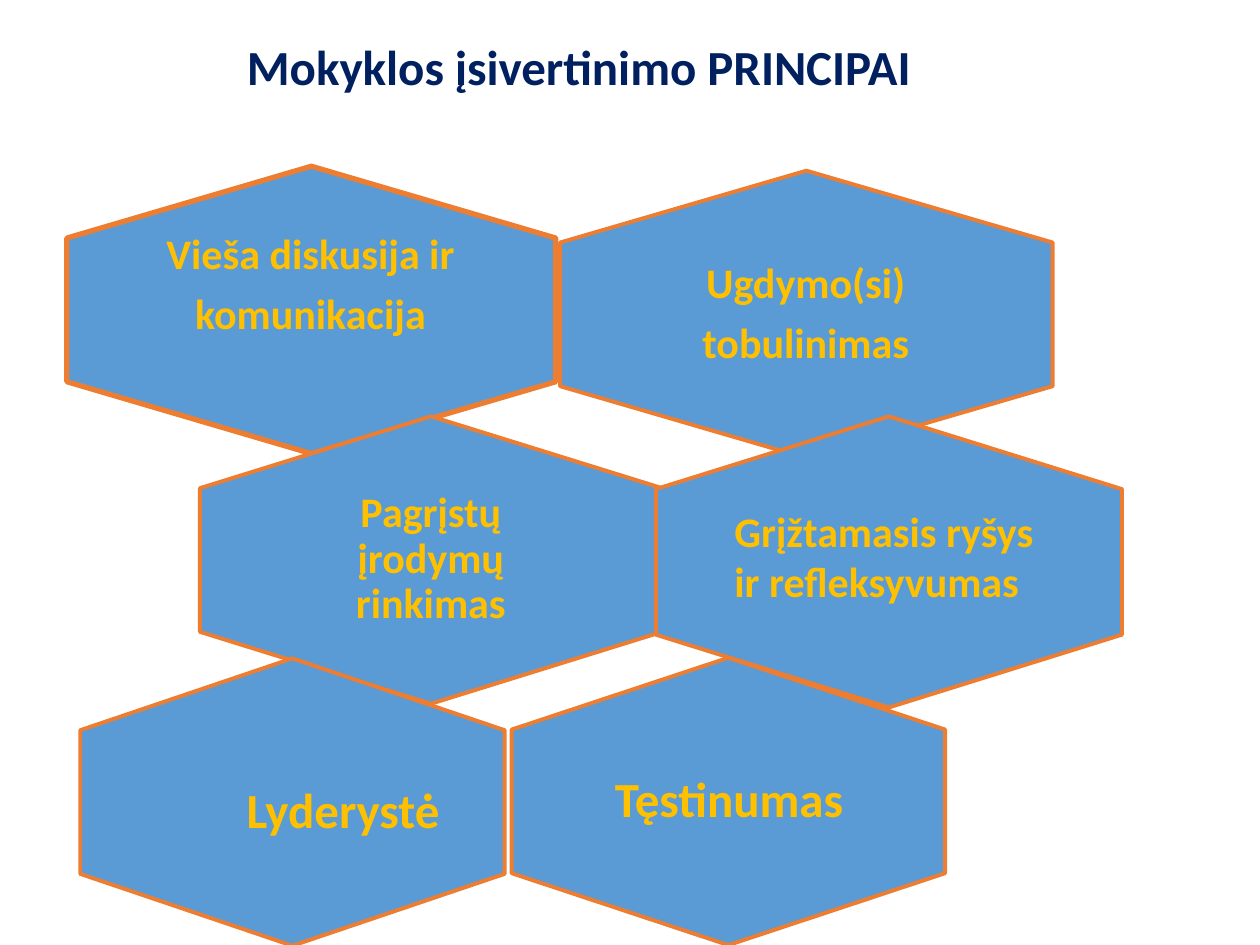
from pptx import Presentation
from pptx.dml.color import RGBColor
from pptx.enum.shapes import MSO_SHAPE as SHAPE
from pptx.enum.text import MSO_ANCHOR as ANCHOR, MSO_AUTO_SIZE as AUTO, PP_ALIGN as ALIGN
from pptx.util import Pt


def color(value):
    return RGBColor.from_string(value)


def write(tf, text, size, fill, align):
    tf.text = text
    for p in tf.paragraphs:
        p.alignment = align
        for r in p.runs:
            r.font.name, r.font.size, r.font.bold = "Calibri", Pt(size), True
            r.font.color.rgb = color(fill)


prs = Presentation()
prs.slide_width, prs.slide_height = Pt(720), Pt(540)
s = prs.slides.add_slide(prs.slide_layouts[5])

# Title
title = s.shapes.title
title.left, title.top, title.width, title.height = Pt(133.9), Pt(17.3), Pt(398.2), Pt(41)
tf = title.text_frame
write(tf, "Mokyklos įsivertinimo PRINCIPAI", 28, "002060", ALIGN.LEFT)
tf.word_wrap = False
tf.auto_size = AUTO.NONE
tf.vertical_anchor = ANCHOR.TOP

# Hexagons, back to front: left, top, width, height before the quarter turn, line
hexagons = [
    (378.7, 38.9, 164.2, 281.5, 2.25),
    (95.8, 37.4, 164.2, 279.4, 3),
    (164.2, 187.9, 164.2, 264.2, 2.25),
    (424.8, 187.9, 166.3, 266.4, 2.25),
    (334.1, 334.1, 164.2, 247.7, 2.25),
    (85, 337, 164.2, 242.6, 2.25),
]
for left, top, width, height, line in hexagons:
    sp = s.shapes.add_shape(SHAPE.HEXAGON, Pt(left), Pt(top), Pt(width), Pt(height))
    sp.rotation = 90
    sp.shadow.inherit = False
    sp.fill.solid()
    sp.fill.fore_color.rgb = color("5B9BD5")
    sp.line.color.rgb = color("ED7D31")
    sp.line.width = Pt(line)

# Centred labels: text, left, top, width, size, inset, bottom inset
centred = [
    ("Ugdymo(si)\ntobulinimas", 366.5, 125.3, 187.9, 24, 7.2, 7.2),
    ("Vieša diskusija ir\nkomunikacija", 84.2, 122.4, 186.5, 24, 0, 28),
    ("Pagrįstų įrodymų rinkimas", 158.4, 265, 175.7, 24, 7.2, 7.2),
    ("Tęstinumas", 334.1, 403.2, 164.9, 28, 8.6, 8.6),
]
for text, left, top, width, size, inset, bottom in centred:
    tf = s.shapes.add_textbox(Pt(left), Pt(top), Pt(width), Pt(109.4)).text_frame
    tf.word_wrap = True
    tf.vertical_anchor = ANCHOR.MIDDLE
    tf.margin_left = tf.margin_right = tf.margin_top = Pt(inset)
    tf.margin_bottom = Pt(bottom)
    write(tf, text, size, "FFC000", ALIGN.CENTER)
    for p in tf.paragraphs:
        p.line_spacing = 0.9
        p.space_after = Pt(size * 0.35)

# Left-aligned labels: text, left, top, width, height, size
plain = [
    ("Grįžtamasis ryšys\nir refleksyvumas", 412.6, 285.1, 187.2, 65.5, 24),
    ("Lyderystė", 133.9, 442.1, 126, 41, 28),
]
for text, left, top, width, height, size in plain:
    tf = s.shapes.add_textbox(Pt(left), Pt(top), Pt(width), Pt(height)).text_frame
    tf.word_wrap = False
    tf.auto_size = AUTO.SHAPE_TO_FIT_TEXT
    write(tf, text, size, "FFC000", ALIGN.LEFT)

prs.save("out.pptx")
